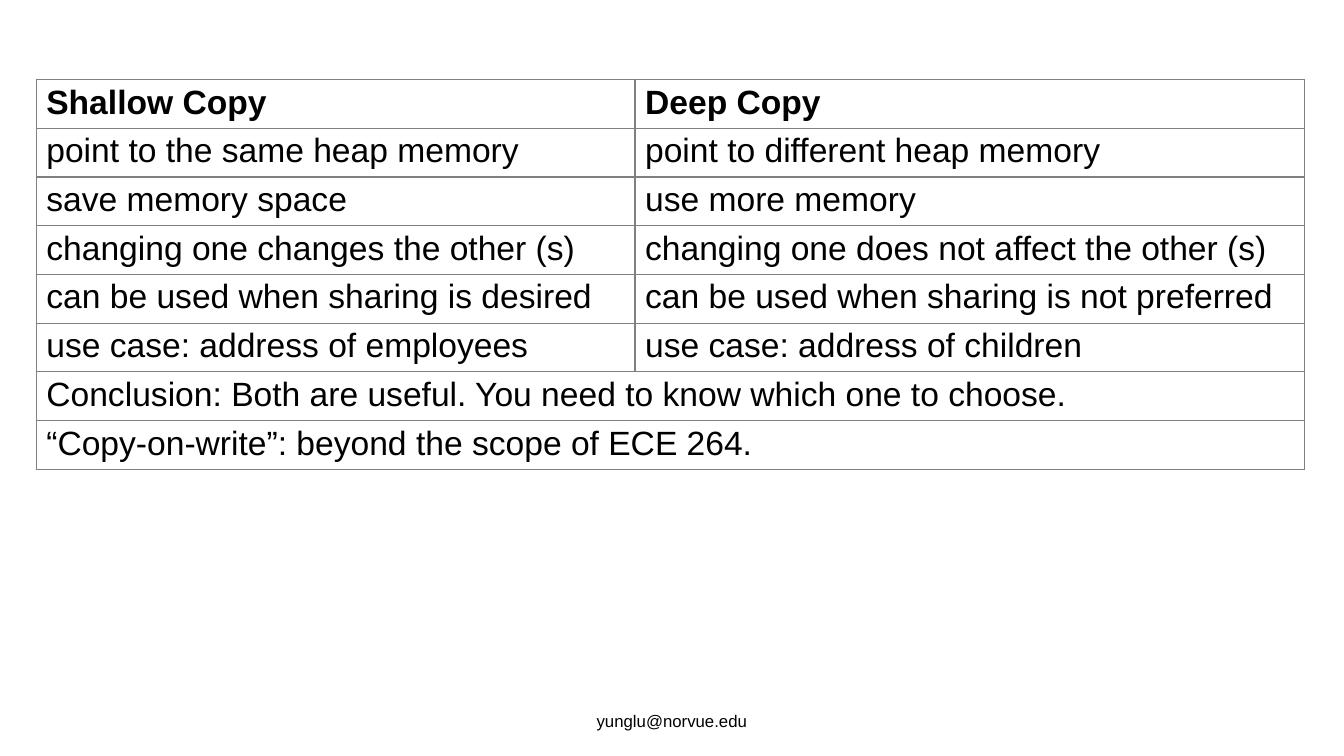
from lxml.etree import SubElement
from pptx import Presentation
from pptx.dml.color import RGBColor
from pptx.enum.text import MSO_ANCHOR as Anchor, PP_ALIGN as Align
from pptx.oxml.ns import qn
from pptx.util import Pt

ROWS = [
    ("Shallow Copy", "Deep Copy"),
    ("point to the same heap memory", "point to different heap memory"),
    ("save memory space", "use more memory"),
    ("changing one changes the other (s)", "changing one does not affect the other (s)"),
    ("can be used when sharing is desired", "can be used when sharing is not preferred"),
    ("use case: address of employees", "use case: address of children"),
    ("Conclusion: Both are useful. You need to know which one to choose.",),
    ("“Copy-on-write”: beyond the scope of ECE 264.",),
]


def rgb(value):
    return RGBColor.from_string(value)


class Deck:
    """Holds the style and the current slide, and adds elements to it."""

    font = "Arial"
    ink = "000000"
    rule = "808080"

    def __init__(self, s):
        self.s = s

    def run(self, p, text, size, bold=False):
        r = p.add_run()
        r.text = text
        r.font.name = self.font
        r.font.size = Pt(size)
        r.font.bold = bold
        r.font.color.rgb = rgb(self.ink)

    def text(self, x, y, w, h, text, size):
        tf = self.s.shapes.add_textbox(Pt(x), Pt(y), Pt(w), Pt(h)).text_frame
        tf.word_wrap = True
        tf.vertical_anchor = Anchor.MIDDLE
        p = tf.paragraphs[0]
        p.alignment = Align.CENTER
        self.run(p, text, size)

    def borders(self, cell):
        tc_pr = cell._tc.get_or_add_tcPr()
        for i, side in enumerate(("lnL", "lnR", "lnT", "lnB")):
            ln = tc_pr.makeelement(qn(f"a:{side}"), {"w": str(Pt(1))})
            fill = SubElement(ln, qn("a:solidFill"))
            SubElement(fill, qn("a:srgbClr"), val=self.rule)
            tc_pr.insert(i, ln)

    def table(self, x, y, widths, row_h, rows, size):
        shape = self.s.shapes.add_table(
            len(rows), len(widths), Pt(x), Pt(y), Pt(sum(widths)), Pt(row_h * len(rows)))
        table = shape.table
        table.first_row = table.horz_banding = False
        for column, width in zip(table.columns, widths):
            column.width = Pt(width)
        for i, texts in enumerate(rows):
            table.rows[i].height = Pt(row_h)
            if len(texts) < len(widths):
                table.cell(i, len(texts) - 1).merge(table.cell(i, len(widths) - 1))
            for cell in table.rows[i].cells:
                cell.fill.background()
                cell.margin_top = cell.margin_bottom = Pt(3)
                self.borders(cell)
            for j, text in enumerate(texts):
                p = table.cell(i, j).text_frame.paragraphs[0]
                self.run(p, text, size, bold=i == 0)


def main():
    prs = Presentation()
    prs.slide_width, prs.slide_height = Pt(960), Pt(540)
    deck = Deck(prs.slides.add_slide(prs.slide_layouts[6]))
    deck.text(318, 500.5, 324, 28.8, "yunglu@norvue.edu", 12)
    deck.table(25.9, 56.9, (427.7, 478), 34, ROWS, 24)
    prs.save("out.pptx")


if __name__ == "__main__":
    main()
